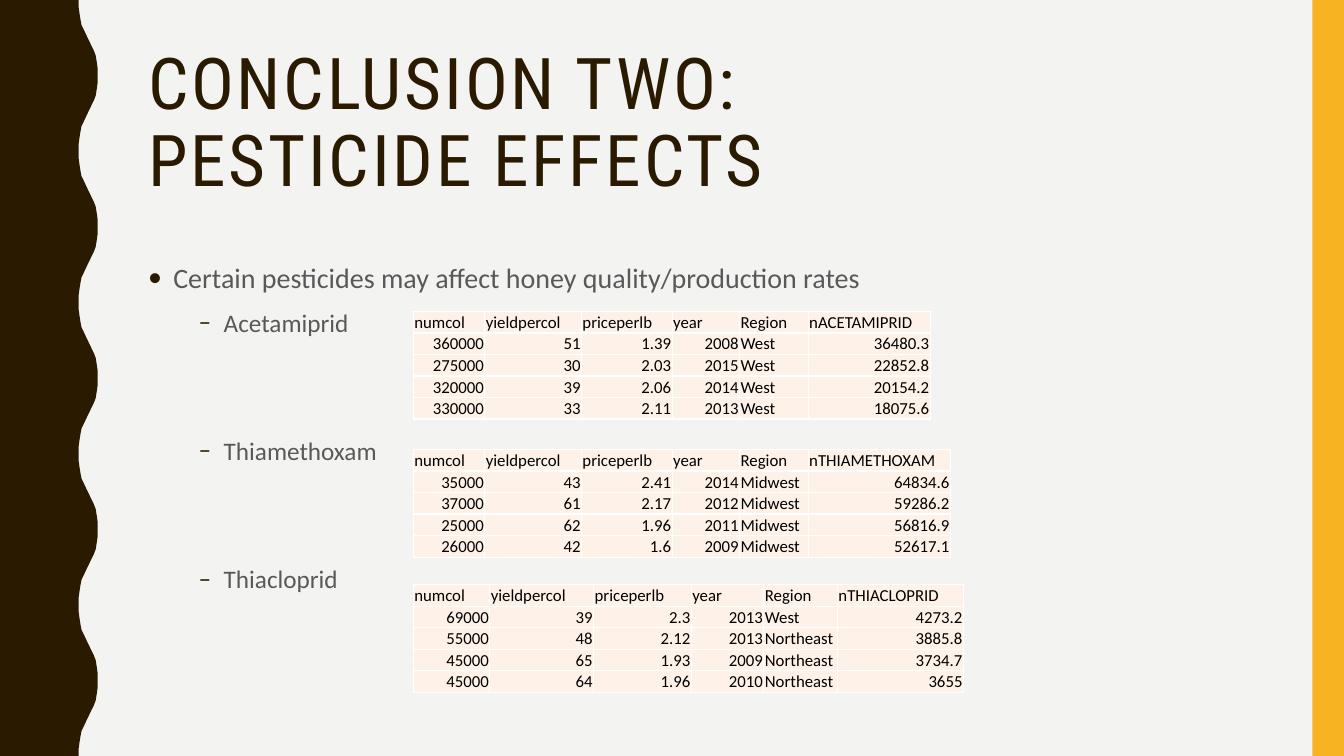
from pptx import Presentation
from pptx.dml.color import RGBColor
from pptx.enum.shapes import MSO_SHAPE as Shape
from pptx.enum.text import MSO_ANCHOR as Anchor, MSO_AUTO_SIZE as AutoSize, PP_ALIGN as Align
from pptx.oxml import parse_xml
from pptx.oxml.ns import nsdecls
from pptx.util import Pt

BACKDROP = RGBColor(0xF3, 0xF3, 0xF2)
BROWN = RGBColor(0x2A, 0x1A, 0x00)
YELLOW = RGBColor(0xF8, 0xB3, 0x23)
GREY = RGBColor(0x59, 0x59, 0x59)
BLACK = RGBColor(0x00, 0x00, 0x00)
WHITE = RGBColor(0xFF, 0xFF, 0xFF)
CREAM = RGBColor(0xFE, 0xF2, 0xE8)

WIDTH, HEIGHT = 960, 540
WAVE_PERIOD = 108
HALF_WAVE = [
    (56.2, 0), (56.2, 5), (56.9, 10), (57.6, 14.4), (58.3, 18),
    (59.8, 21), (61.2, 24), (62.6, 27), (64.1, 30), (65.5, 33),
    (67, 36), (68.4, 39.6), (69.1, 44), (69.8, 49), (69.8, 54),
]

BULLETS = [
    ("Certain pesticides may affect honey quality/production rates", 0, 20, 7),
    ("Acetamiprid", 1, 18, 7),
    ("Thiamethoxam", 1, 18, 68),
    ("Thiacloprid", 1, 18, 68),
]
HEADINGS = ["numcol", "yieldpercol", "priceperlb", "year", "Region"]
NARROW = [51.1, 69.1, 64.8, 48.2, 49]
WIDE = [54.7, 74.2, 69.8, 51.8, 52.6]
TABLES = [
    (222.5, NARROW + [87.1], [
        HEADINGS + ["nACETAMIPRID"],
        ["360000", "51", "1.39", "2008", "West", "36480.3"],
        ["275000", "30", "2.03", "2015", "West", "22852.8"],
        ["320000", "39", "2.06", "2014", "West", "20154.2"],
        ["330000", "33", "2.11", "2013", "West", "18075.6"],
    ]),
    (321.1, NARROW + [101.5], [
        HEADINGS + ["nTHIAMETHOXAM"],
        ["35000", "43", "2.41", "2014", "Midwest", "64834.6"],
        ["37000", "61", "2.17", "2012", "Midwest", "59286.2"],
        ["25000", "62", "1.96", "2011", "Midwest", "56816.9"],
        ["26000", "42", "1.6", "2009", "Midwest", "52617.1"],
    ]),
    (417.6, WIDE + [90], [
        HEADINGS + ["nTHIACLOPRID"],
        ["69000", "39", "2.3", "2013", "West", "4273.2"],
        ["55000", "48", "2.12", "2013", "Northeast", "3885.8"],
        ["45000", "65", "1.93", "2009", "Northeast", "3734.7"],
        ["45000", "64", "1.96", "2010", "Northeast", "3655"],
    ]),
]


def apply(target, **values):
    """Set each named attribute on the target."""
    for name, value in values.items():
        setattr(target, name, value)


def style_font(font, name, size, color):
    """Give a font its face, size and colour."""
    apply(font, name=name, size=Pt(size), bold=False)
    font.color.rgb = color


def place(shape, box):
    """Move a shape to a box of left, top, width and height."""
    apply(shape, **dict(zip(("left", "top", "width", "height"), map(Pt, box))))


def paint(shape, color):
    """Fill a shape flatly, with no line or shadow."""
    shape.shadow.inherit = False
    shape.fill.solid()
    shape.fill.fore_color.rgb = color
    shape.line.fill.background()


def add_wave(page, box):
    """Draw the brown band with a wavy right edge."""
    left, top, _, height = box
    period = HALF_WAVE + [(x, WAVE_PERIOD - y) for x, y in HALF_WAVE[-2:0:-1]]
    edge = [(left + x, top + start + y)
            for start in range(0, height, WAVE_PERIOD) for x, y in period]
    edge += [(left + HALF_WAVE[0][0], top + height), (left, top + height)]
    builder = page.shapes.build_freeform(Pt(left), Pt(top))
    builder.add_line_segments([(Pt(x), Pt(y)) for x, y in edge], close=True)
    paint(builder.convert_to_shape(), BROWN)


def add_stripe(page, box):
    """Draw the yellow stripe."""
    paint(page.shapes.add_shape(Shape.RECTANGLE, *map(Pt, box)), YELLOW)


def fill_title(page, box):
    """Place and format the title."""
    title = page.shapes.title
    place(title, box)
    frame = title.text_frame
    frame.text = "CONCLUSION TWO:\vPESTICIDE EFFECTS"
    apply(frame, word_wrap=True, auto_size=AutoSize.NONE, vertical_anchor=Anchor.MIDDLE)
    para = frame.paragraphs[0]
    apply(para, alignment=Align.LEFT, line_spacing=0.9)
    for span in para.runs:
        style_font(span.font, "Roboto Condensed", 51, BROWN)
        span.font._element.set("spc", "200")


def fill_bullets(page, box):
    """Place and format the bullet list."""
    body = page.placeholders[1]
    place(body, box)
    frame = body.text_frame
    apply(frame, word_wrap=True, auto_size=AutoSize.NONE, vertical_anchor=Anchor.TOP)
    for index, (text, level, size, space) in enumerate(BULLETS):
        para = frame.add_paragraph() if index else frame.paragraphs[0]
        apply(para, text=text, level=level, alignment=Align.LEFT,
              line_spacing=1.1, space_before=Pt(space), space_after=Pt(0))
        style_font(para.runs[0].font, "Calibri", size, GREY)
        props = para._p.get_or_add_pPr()
        props.set("marL", str(Pt(18 + 36 * level)))
        props.set("indent", str(Pt(-18)))
        props.append(parse_xml(
            f'<a:buClr {nsdecls("a")}><a:srgbClr val="{BROWN}"/></a:buClr>'))
        props.append(parse_xml(f'<a:buFont {nsdecls("a")} typeface="Calibri"/>'))
        props.append(parse_xml(f'<a:buChar {nsdecls("a")} char="{"•–"[level]}"/>'))


def fill_cell(cell, text, align):
    """Write one table cell with white borders and a cream fill."""
    apply(cell, text=text, vertical_anchor=Anchor.BOTTOM, margin_left=Pt(0.72),
          margin_right=Pt(0.72), margin_top=Pt(0.72), margin_bottom=Pt(0))
    para = cell.text_frame.paragraphs[0]
    para.alignment = align
    style_font(para.runs[0].font, "Calibri", 12, BLACK)
    props = cell._tc.get_or_add_tcPr()
    for side in "LRTB":
        props.append(parse_xml(
            f'<a:ln{side} {nsdecls("a")} w="{Pt(1)}"><a:solidFill>'
            f'<a:srgbClr val="{WHITE}"/></a:solidFill></a:ln{side}>'))
    cell.fill.solid()
    cell.fill.fore_color.rgb = CREAM


def add_data_table(page, box, widths, rows):
    """Add one pesticide table, with numbers to the right."""
    frame = page.shapes.add_table(len(rows), len(widths), *map(Pt, box))
    table = frame.table
    apply(table, first_row=False, horz_banding=False)
    for column, width in zip(table.columns, widths):
        column.width = Pt(width)
    for row_index, values in enumerate(rows):
        table.rows[row_index].height = Pt(box[3] / len(rows))
        for column_index, text in enumerate(values):
            align = Align.RIGHT if text[0].isdigit() else Align.LEFT
            fill_cell(table.cell(row_index, column_index), text, align)


def build_conclusion(deck):
    """Build the pesticide conclusion slide."""
    page = deck.slides.add_slide(deck.slide_layouts[1])
    page.background.fill.solid()
    page.background.fill.fore_color.rgb = BACKDROP
    add_wave(page, (0, 0, 69.8, HEIGHT))
    add_stripe(page, (937.5, 0, 22.5, HEIGHT))
    fill_title(page, (98.6, 30.2, 801.4, 117.4))
    fill_bullets(page, (98.6, 180, 801.4, 283))
    for top, widths, rows in TABLES:
        add_data_table(page, (295.2, top, sum(widths), 76), widths, rows)


def main():
    """Create and save the deck."""
    deck = Presentation()
    apply(deck, slide_width=Pt(WIDTH), slide_height=Pt(HEIGHT))
    build_conclusion(deck)
    deck.save("out.pptx")


if __name__ == "__main__":
    main()
